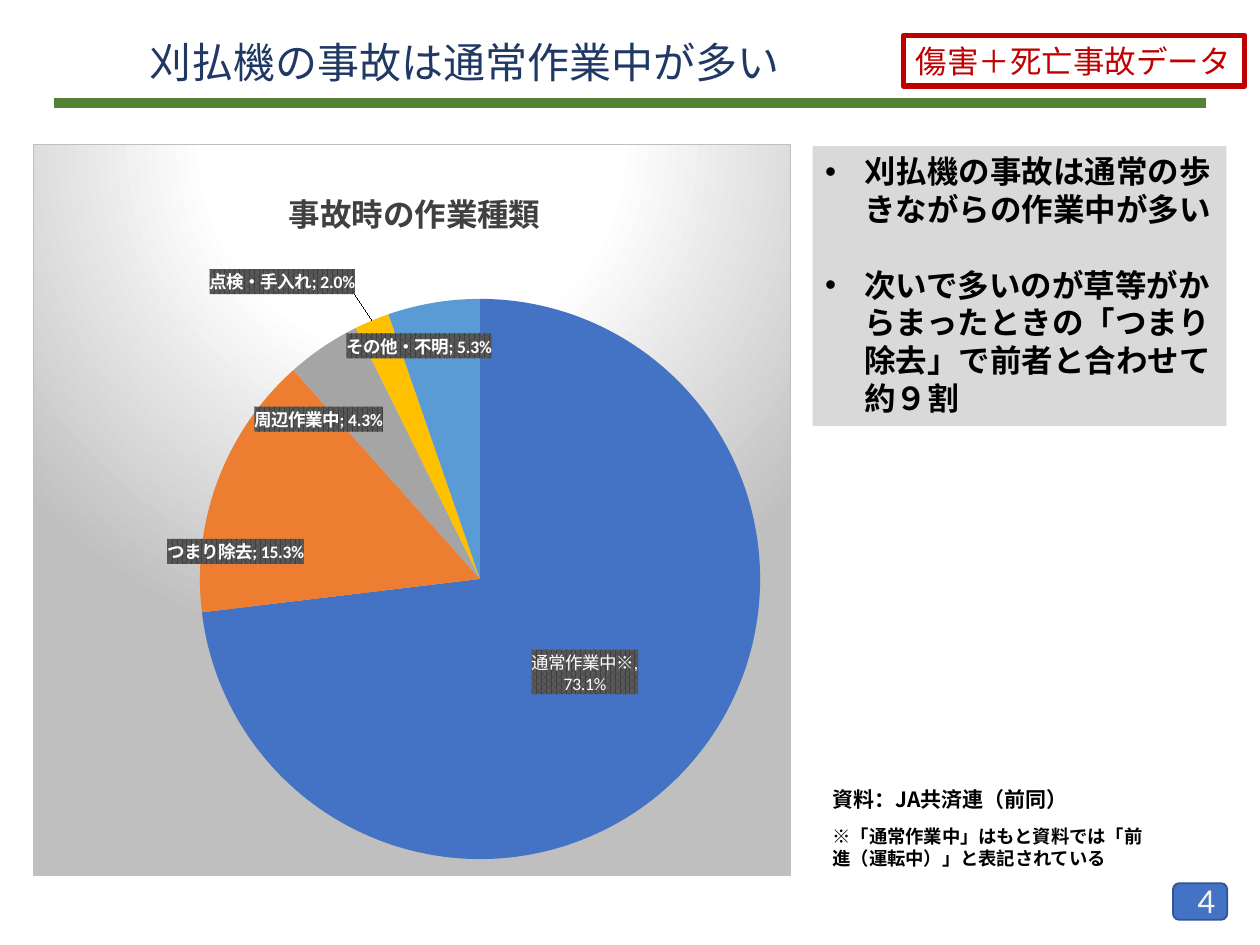
from dataclasses import dataclass

import lxml.etree
import pptx
import pptx.chart.data
import pptx.dml.color
import pptx.enum.chart
import pptx.enum.shapes
import pptx.enum.text
import pptx.oxml
import pptx.oxml.ns
import pptx.util

Pt = pptx.util.Pt
qn = pptx.oxml.ns.qn
SHAPES = pptx.enum.shapes.MSO_SHAPE
ALIGN = pptx.enum.text.PP_ALIGN
ANCHOR = pptx.enum.text.MSO_ANCHOR
NAMESPACES = " ".join(pptx.oxml.ns.nsdecls(prefix) for prefix in ("a", "c"))


@dataclass(frozen=True)
class Theme:
    latin: str = "Calibri"
    japanese: str = "Noto Sans CJK JP"
    line_height: float = 1.2
    navy: str = "203864"
    green: str = "548235"
    red: str = "C00000"
    black: str = "000000"
    white: str = "FFFFFF"
    number: str = "F2F2F2"
    badge: str = "4472C4"
    badge_line: str = "325491"
    panel: str = "D9D9D9"
    chart_edge: str = "BFBFBF"
    chart_title: str = "404040"
    label_dark: str = "404040"
    label_light: str = "595959"
    slices: tuple = ("4472C4", "ED7D31", "A5A5A5", "FFC000", "5B9BD5")
    title_size: float = 24
    number_size: float = 20
    body_size: float = 18
    source_size: float = 12
    note_size: float = 10.5
    label_size: float = 10


THEME = Theme()

# Category, share, and label offset from the slice centre as fractions of the chart
WORK_TYPES = (
    ("前進(運転中)", 0.731, None),
    ("つまり除去", 0.153, (-0.15, 0.03)),
    ("周辺作業中", 0.043, (-0.11, -0.06)),
    ("点検・手入れ", 0.02, (-0.19, -0.23)),
    ("その他・不明", 0.053, (-0.05, -0.13)),
)


def rgb(color):
    return pptx.dml.color.RGBColor.from_string(color)


def set_font(font, color, **values):
    for name, value in values.items():
        setattr(font, name, value)
    font.color.rgb = rgb(color)


def add_box(slide, bounds, preset=SHAPES.RECTANGLE, fill=None, line=None, weight=1):
    shape = slide.shapes.add_shape(preset, *map(Pt, bounds))
    shape.shadow.inherit = False
    if fill:
        shape.fill.solid()
        shape.fill.fore_color.rgb = rgb(fill)
    else:
        shape.fill.background()
    if line:
        shape.line.color.rgb = rgb(line)
        shape.line.width = Pt(weight)
    else:
        shape.line.fill.background()
    return shape


def add_textbox(slide, bounds):
    return slide.shapes.add_textbox(*map(Pt, bounds))


def add_bullet(paragraph, indent):
    properties = paragraph._p.get_or_add_pPr()
    properties.set("marL", str(Pt(indent)))
    properties.set("indent", str(-Pt(indent)))
    for tag, name, value in (("a:buFont", "typeface", "Arial"), ("a:buChar", "char", "•")):
        lxml.etree.SubElement(properties, qn(tag)).set(name, value)


def write(shape, lines, size, color, font=THEME.japanese, bold=False, align=ALIGN.LEFT,
          anchor=ANCHOR.TOP, bullet_indent=None):
    frame = shape.text_frame
    frame.word_wrap = True
    frame.vertical_anchor = anchor
    for index, text in enumerate(lines):
        paragraph = frame.add_paragraph() if index else frame.paragraphs[0]
        spacing = Pt(size * THEME.line_height)
        paragraph.alignment = align
        paragraph.line_spacing = spacing
        if index:
            paragraph.space_before = spacing
        if bullet_indent:
            add_bullet(paragraph, bullet_indent)
        run = paragraph.add_run()
        run.text = text
        set_font(run.font, color, name=font, size=Pt(size), bold=bold)
        east_asian = lxml.etree.SubElement(run._r.get_or_add_rPr(), qn("a:ea"))
        east_asian.set("typeface", font)


def add_rule(slide, left, right, y):
    rule = slide.shapes.add_connector(
        pptx.enum.shapes.MSO_CONNECTOR.STRAIGHT, Pt(left), Pt(y), Pt(right), Pt(y))
    rule.line.color.rgb = rgb(THEME.green)
    rule.line.width = Pt(6)
    lxml.etree.SubElement(rule._element.spPr, qn("a:effectLst"))


def layout_xml(x, y, extra=""):
    return (f'<c:layout {NAMESPACES}><c:manualLayout>{extra}'
            f'<c:x val="{x}"/><c:y val="{y}"/></c:manualLayout></c:layout>')


def place(parent, layout, index):
    for old in parent.findall(qn("c:layout")):
        parent.remove(old)
    parent.insert(index, pptx.oxml.parse_xml(layout))


def chart_area_xml():
    stops = "".join(f'<a:gs pos="{position}"><a:srgbClr val="{color}"/></a:gs>'
                    for position, color in ((0, THEME.white), (39000, THEME.white),
                                            (100000, THEME.chart_edge)))
    return (f'<c:spPr {NAMESPACES}><a:gradFill><a:gsLst>{stops}</a:gsLst><a:path path="circle">'
            '<a:fillToRect l="50000" t="-80000" r="50000" b="180000"/></a:path></a:gradFill>'
            f'<a:ln w="{Pt(0.75)}"><a:solidFill><a:srgbClr val="{THEME.chart_edge}"/>'
            '</a:solidFill></a:ln></c:spPr>')


def labels_xml():
    """Data labels on a dark pattern; the first has its own wording."""
    def run_style(tag, bold):
        return (f'<a:{tag} sz="{int(THEME.label_size * 100)}" b="{bold}"><a:solidFill>'
                f'<a:srgbClr val="{THEME.white}"/></a:solidFill>'
                f'<a:latin typeface="{THEME.latin}"/></a:{tag}>')

    pattern = ('<c:spPr><a:pattFill prst="pct75">'
               f'<a:fgClr><a:srgbClr val="{THEME.label_dark}"/></a:fgClr>'
               f'<a:bgClr><a:srgbClr val="{THEME.label_light}"/></a:bgClr>'
               '</a:pattFill><a:ln><a:noFill/></a:ln></c:spPr>')
    style = ('<c:numFmt formatCode="0.0%" sourceLinked="0"/>' + pattern +
             f'<c:txPr><a:bodyPr/><a:p><a:pPr>{run_style("defRPr", 1)}</a:pPr></a:p></c:txPr>')
    shown = ('<c:dLblPos val="ctr"/><c:showLegendKey val="0"/><c:showVal val="1"/>'
             '<c:showCatName val="1"/><c:showSerName val="0"/><c:showPercent val="0"/>'
             '<c:showBubbleSize val="0"/><c:separator>; </c:separator>')
    custom = "".join(f'<a:p><a:r>{run_style("rPr", 0)}<a:t>{text}</a:t></a:r></a:p>'
                     for text in ("通常作業中※,", "73.1%"))
    points = ""
    for index, (_, _, offset) in enumerate(WORK_TYPES):
        content = (layout_xml(*offset) + style if offset else
                   f'<c:tx><c:rich><a:bodyPr/>{custom}</c:rich></c:tx>{pattern}')
        points += f'<c:dLbl><c:idx val="{index}"/>{content}{shown}</c:dLbl>'
    return (f'<c:dLbls {NAMESPACES}>{points}{style}{shown}'
            '<c:showLeaderLines val="1"/></c:dLbls>')


def add_work_type_pie(slide, bounds):
    data = pptx.chart.data.CategoryChartData(number_format="0.0%")
    data.categories = [name for name, _, _ in WORK_TYPES]
    data.add_series("Series 1", [share for _, share, _ in WORK_TYPES])
    chart = slide.shapes.add_chart(
        pptx.enum.chart.XL_CHART_TYPE.PIE, *map(Pt, bounds), data).chart
    set_font(chart.font, THEME.black, name=THEME.latin, size=Pt(THEME.label_size))
    chart.has_legend = False
    chart.has_title = True
    title = chart.chart_title
    title.text_frame.text = "事故時の作業種類"
    set_font(title.text_frame.paragraphs[0].runs[0].font, THEME.chart_title,
             name=THEME.latin, size=Pt(THEME.body_size), bold=True)
    edges = '<c:xMode val="edge"/><c:yMode val="edge"/>'
    place(title._element, layout_xml(0.33, 0.05, edges), 1)

    plot = chart.plots[0]
    plot.vary_by_categories = True
    for index, color in enumerate(THEME.slices):
        fill = plot.series[0].points[index].format.fill
        fill.solid()
        fill.fore_color.rgb = rgb(color)
    space = chart.element
    space.find(".//" + qn("c:cat")).addprevious(pptx.oxml.parse_xml(labels_xml()))
    area = space.find(".//" + qn("c:plotArea"))
    inner = '<c:layoutTarget val="inner"/>' + edges
    place(area, layout_xml(0.22, 0.21, inner).replace(
        "</c:manualLayout>", '<c:w val="0.74"/><c:h val="0.77"/></c:manualLayout>'), 0)
    space.find(qn("c:chart")).addnext(pptx.oxml.parse_xml(chart_area_xml()))


def main():
    presentation = pptx.Presentation()
    presentation.slide_width, presentation.slide_height = Pt(720), Pt(540)
    slide = presentation.slides.add_slide(presentation.slide_layouts[6])

    add_box(slide, (670.3, 504.7, 31, 20.9), SHAPES.ROUNDED_RECTANGLE,
            THEME.badge, THEME.badge_line)
    add_rule(slide, 31, 689, 59)
    write(add_textbox(slide, (548, 504.7, 153.4, 18.7)), ["4"], THEME.number_size,
          THEME.number, THEME.latin, align=ALIGN.RIGHT, anchor=ANCHOR.MIDDLE)
    write(add_textbox(slide, (78.5, 17.3, 390, 36)), ["刈払機の事故は通常作業中が多い"],
          THEME.title_size, THEME.navy)
    write(add_box(slide, (516.2, 20.2, 195.2, 29), line=THEME.red, weight=3),
          ["傷害＋死亡事故データ"], THEME.body_size, THEME.red)
    write(add_textbox(slide, (468.7, 445.7, 158.4, 21.6)), ["資料：JA共済連（前同）"],
          THEME.source_size, THEME.black, bold=True)
    add_work_type_pie(slide, (18.7, 82.1, 433.4, 418.3))
    write(add_box(slide, (464.4, 83.5, 236.4, 160), fill=THEME.panel),
          ["刈払機の事故は通常の歩きながらの作業中が多い",
           "次いで多いのが草等がからまったときの「つまり除去」で前者と合わせて約９割"],
          THEME.body_size, THEME.black, bold=True, bullet_indent=22.5)
    write(add_textbox(slide, (468.7, 468, 197.3, 32.4)),
          ["※「通常作業中」はもと資料では「前進（運転中）」と表記されている"],
          THEME.note_size, THEME.black, bold=True)
    presentation.save("out.pptx")


if __name__ == "__main__":
    main()
